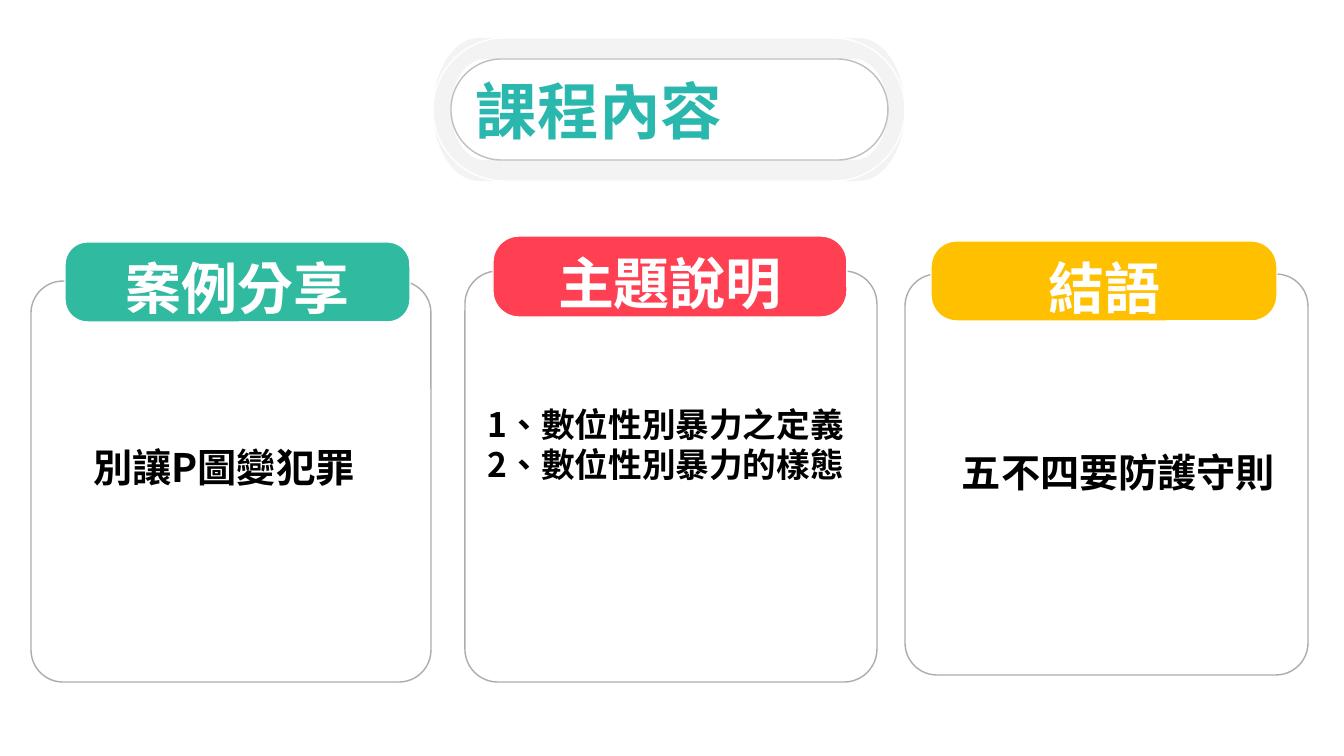
from dataclasses import dataclass
from typing import Optional

from lxml import etree
from pptx import Presentation
from pptx.dml.color import RGBColor
from pptx.enum.shapes import MSO_SHAPE
from pptx.enum.text import MSO_ANCHOR, MSO_AUTO_SIZE, PP_ALIGN
from pptx.oxml.ns import qn
from pptx.util import Emu, Pt

PX = 914400 / 100.8
ROUND_RECT = MSO_SHAPE.ROUNDED_RECTANGLE
LEFT, CENTER = PP_ALIGN.LEFT, PP_ALIGN.CENTER
TOP, MIDDLE = MSO_ANCHOR.TOP, MSO_ANCHOR.MIDDLE
NO_AUTOFIT = MSO_AUTO_SIZE.NONE

WHITE = RGBColor(0xFF, 0xFF, 0xFF)
BLACK = RGBColor(0x00, 0x00, 0x00)
RING_GRAY = RGBColor(0xF3, 0xF3, 0xF3)
PILL_LINE = RGBColor(0xBF, 0xBF, 0xBF)
CARD_LINE = RGBColor(0xAF, 0xAB, 0xAB)
TEAL = RGBColor(0x2A, 0xB7, 0xAE)
GREEN = RGBColor(0x30, 0xBA, 0xA0)
RED = RGBColor(0xFE, 0x40, 0x52)
YELLOW = RGBColor(0xFF, 0xC0, 0x00)

HEAD_FONT = "Arial"
BODY_FONT = "Noto Sans CJK SC"
LANGUAGE = "zh-TW"
KAPPA = 0.55  # control length of a quarter ellipse


@dataclass
class Box:
    x: int
    y: int
    w: int
    h: int

    def emu(self) -> list[Emu]:
        return [px(v) for v in (self.x, self.y, self.w, self.h)]


@dataclass
class Topic:
    heading: str
    lines: list[str]
    color: RGBColor
    card: Box
    tab: Box
    tab_round: float
    body: Box
    size: int
    align: PP_ALIGN = LEFT
    pad_y: int = 10


def px(value: float) -> Emu:
    return Emu(round(value * PX))


def write(sp, lines: list[str], *, size: int, color: RGBColor, font: str,
          align: PP_ALIGN = LEFT, anchor: MSO_ANCHOR = TOP,
          pad_x: int = 10, pad_y: int = 5) -> None:
    tf = sp.text_frame
    tf.word_wrap = True
    tf.auto_size = NO_AUTOFIT
    tf.vertical_anchor = anchor
    tf.margin_left = tf.margin_right = px(pad_x)
    tf.margin_top = tf.margin_bottom = px(pad_y)
    for i, line in enumerate(lines):
        p = tf.add_paragraph() if i else tf.paragraphs[0]
        p.alignment = align
        r = p.add_run()
        r.text = line
        r.font.size = Pt(size)
        r.font.bold = True
        r.font.name = font
        r.font.color.rgb = color
        r.font._element.set("lang", LANGUAGE)
        ea = etree.SubElement(r.font._element, qn("a:ea"))
        ea.set("typeface", BODY_FONT)


def add_round_rect(s, box: Box, rounding: float, line: RGBColor,
                   fill: Optional[RGBColor] = None):
    sp = s.shapes.add_shape(ROUND_RECT, *box.emu())
    sp.adjustments[0] = rounding
    sp.shadow.inherit = False
    if fill is None:
        sp.fill.background()
    else:
        sp.fill.solid()
        sp.fill.fore_color.rgb = fill
    sp.line.color.rgb = line
    sp.line.width = Pt(1)
    return sp


def draw(outline, command: str, *points: tuple[float, float]) -> None:
    segment = etree.SubElement(outline, qn(f"a:{command}"))
    for x, y in points:
        pt = etree.SubElement(segment, qn("a:pt"))
        pt.set("x", str(round(x)))
        pt.set("y", str(round(y)))


def draw_oval_ended(outline, box: Box, rx: int) -> None:
    """Add a contour whose ends are half ellipses of radius rx."""
    ry = box.h / 2
    top, mid, bottom = box.y, box.y + ry, box.y + box.h
    left, right = box.x + rx, box.x + box.w - rx
    draw(outline, "moveTo", (left, top))
    for x, side, y0, y1 in ((right, 1, top, bottom), (left, -1, bottom, top)):
        tip, bend = x + side * rx, x + side * rx * KAPPA
        draw(outline, "lnTo", (x, y0))
        draw(outline, "cubicBezTo", (bend, y0),
             (tip, mid + (y0 - mid) * KAPPA), (tip, mid))
        draw(outline, "cubicBezTo", (tip, mid + (y1 - mid) * KAPPA),
             (bend, y1), (x, y1))
    draw(outline, "close")


def add_ring(s, outer: Box, outer_rx: int, inner: Box, inner_rx: int) -> None:
    builder = s.shapes.build_freeform(outer.x, outer.y, scale=PX)
    builder.add_line_segments([(outer.x + outer.w, outer.y + outer.h)])
    sp = builder.convert_to_shape()
    outline = sp._element.find(".//" + qn("a:path"))
    for segment in list(outline):
        outline.remove(segment)
    draw_oval_ended(outline, Box(0, 0, outer.w, outer.h), outer_rx)
    draw_oval_ended(outline, Box(inner.x - outer.x, inner.y - outer.y,
                                 inner.w, inner.h), inner_rx)
    sp.shadow.inherit = False
    sp.fill.solid()
    sp.fill.fore_color.rgb = RING_GRAY
    sp.line.fill.background()


def add_title(s, text: str) -> None:
    outer, pill = Box(433, 38, 472, 143), Box(451, 59, 437, 101)
    add_ring(s, outer, 46, pill, 33)
    add_round_rect(s, pill, 0.5, PILL_LINE, WHITE)
    add_round_rect(s, outer, 0.5, WHITE)
    title = s.shapes.title
    title.left, title.top, title.width, title.height = pill.emu()
    write(title, [text], size=44, color=TEAL, font=HEAD_FONT,
          anchor=MIDDLE, pad_x=25)
    s.shapes._spTree.append(title._element)  # bring in front of the pill


def add_topic(s, topic: Topic) -> None:
    add_round_rect(s, topic.card, 0.08, CARD_LINE)
    tab = add_round_rect(s, topic.tab, topic.tab_round, WHITE, topic.color)
    write(tab, [topic.heading], size=40, color=WHITE, font=HEAD_FONT,
          align=CENTER)
    body = s.shapes.add_textbox(*topic.body.emu())
    write(body, topic.lines, size=topic.size, color=BLACK, font=BODY_FONT,
          align=topic.align, pad_y=topic.pad_y)


TOPICS = [
    Topic("案例分享", ["別讓P圖變犯罪"], GREEN,
          Box(31, 281, 400, 401), Box(65, 242, 345, 80), 0.28,
          Box(82, 438, 284, 57), 28, CENTER, 5),
    Topic("主題說明", ["1、數位性別暴力之定義", "2、數位性別暴力的樣態"], RED,
          Box(465, 271, 412, 411), Box(493, 236, 354, 81), 0.32,
          Box(478, 394, 382, 102), 24),
    Topic("結語", ["五不四要防護守則"], YELLOW,
          Box(905, 274, 403, 401), Box(931, 241, 346, 80), 0.32,
          Box(952, 438, 346, 67), 28),
]


def main() -> None:
    prs = Presentation()
    prs.slide_width, prs.slide_height = px(1344), px(756)
    s = prs.slides.add_slide(prs.slide_layouts[5])
    add_title(s, "課程內容")
    for topic in TOPICS:
        add_topic(s, topic)
    prs.save("out.pptx")


if __name__ == "__main__":
    main()
